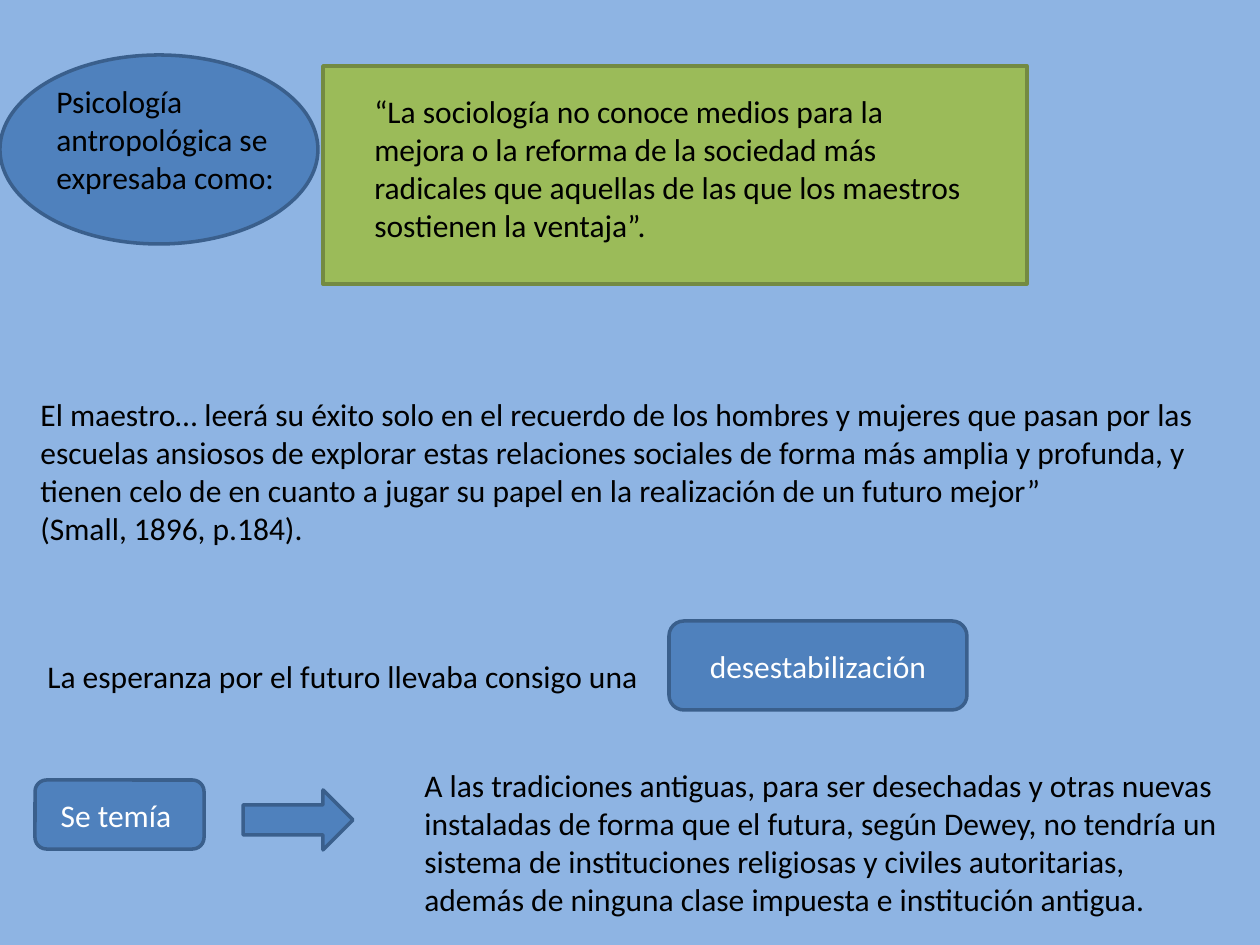
from pptx import Presentation
from pptx.dml.color import RGBColor
from pptx.enum.shapes import MSO_SHAPE
from pptx.enum.text import MSO_ANCHOR, MSO_AUTO_SIZE, PP_ALIGN
from pptx.util import Emu, Pt

EMU_PER_PX = 914400 / 126
COLORS = {
    "background": "8EB4E3",
    "blue": "4F81BD",
    "blue_edge": "3A5F8C",
    "green": "9BBB59",
    "green_edge": "738A42",
    "dark": "000000",
    "light": "FFFFFF",
}


def px(length):
    """Turn pixels into EMU."""
    return Emu(round(length * EMU_PER_PX))


def color(name):
    """Look up a named colour."""
    return RGBColor.from_string(COLORS[name])


def write(frame, text, *, ink="dark", size=18, font="Calibri", align=PP_ALIGN.LEFT):
    """Fill a text frame with one paragraph per line of text."""
    frame.text = text
    for paragraph in frame.paragraphs:
        paragraph.alignment = align
        for run in paragraph.runs:
            run.font.name = font
            run.font.size = Pt(size)
            run.font.color.rgb = color(ink)


def add_passage(slide, box, text, wrap=True):
    """Add a passage of dark text in a box that fits its content."""
    passage = slide.shapes.add_textbox(*map(px, box)).text_frame
    passage.word_wrap = wrap
    passage.auto_size = MSO_AUTO_SIZE.SHAPE_TO_FIT_TEXT
    write(passage, text)


def add_panel(slide, kind, box, text="", tone="blue"):
    """Add an outlined preset shape with an optional centred label."""
    panel = slide.shapes.add_shape(kind, *map(px, box))
    panel.shadow.inherit = False
    panel.fill.solid()
    panel.fill.fore_color.rgb = color(tone)
    panel.line.color.rgb = color(f"{tone}_edge")
    panel.line.width = Pt(2)
    if text:
        panel.text_frame.word_wrap = True
        panel.text_frame.vertical_anchor = MSO_ANCHOR.MIDDLE
        write(panel.text_frame, text, ink="light", align=PP_ALIGN.CENTER)


def add_quotation(slide):
    """Add the source of the quotation, its green panel and its continuation."""
    add_panel(slide, MSO_SHAPE.RECTANGLE, (323, 66, 704, 218), tone="green")
    add_panel(slide, MSO_SHAPE.OVAL, (0, 55, 318, 189))
    add_passage(slide, (44, 76, 268, 127), "Psicología antropológica se expresaba como:")
    add_passage(
        slide,
        (362, 86, 630, 165),
        "“La sociología no conoce medios para la mejora o la reforma de la sociedad "
        "más radicales que aquellas de las que los maestros sostienen la ventaja”.",
    )
    add_passage(
        slide,
        (28, 389, 1206, 165),
        "El maestro… leerá su éxito solo en el recuerdo de los hombres y mujeres que "
        "pasan por las escuelas ansiosos de explorar estas relaciones sociales de forma "
        "más amplia y profunda, y tienen celo de en cuanto a jugar su papel en la "
        "realización de un futuro mejor”\n(Small, 1896, p.184).",
    )


def add_consequences(slide):
    """Add the destabilisation and the fear that followed from it."""
    add_passage(
        slide, (35, 651, 630, 50), "La esperanza por el futuro llevaba consigo una", wrap=False
    )
    add_panel(slide, MSO_SHAPE.ROUNDED_RECTANGLE, (669, 621, 298, 89), "desestabilización")
    add_panel(slide, MSO_SHAPE.ROUNDED_RECTANGLE, (35, 780, 169, 69), "Se temía ")
    add_panel(slide, MSO_SHAPE.RIGHT_ARROW, (243, 790, 110, 60))
    add_passage(
        slide,
        (412, 760, 822, 165),
        "A las tradiciones antiguas, para ser desechadas y otras nuevas instaladas de "
        "forma que el futura, según Dewey, no tendría un sistema de instituciones "
        "religiosas y civiles autoritarias, además de ninguna clase impuesta e "
        "institución antigua.",
    )


def main():
    """Build and save the slide."""
    deck = Presentation()
    deck.slide_width, deck.slide_height = px(1260), px(945)
    slide = deck.slides.add_slide(deck.slide_layouts.get_by_name("Blank"))
    slide.background.fill.solid()
    slide.background.fill.fore_color.rgb = color("background")
    add_quotation(slide)
    add_consequences(slide)
    deck.save("out.pptx")


if __name__ == "__main__":
    main()
